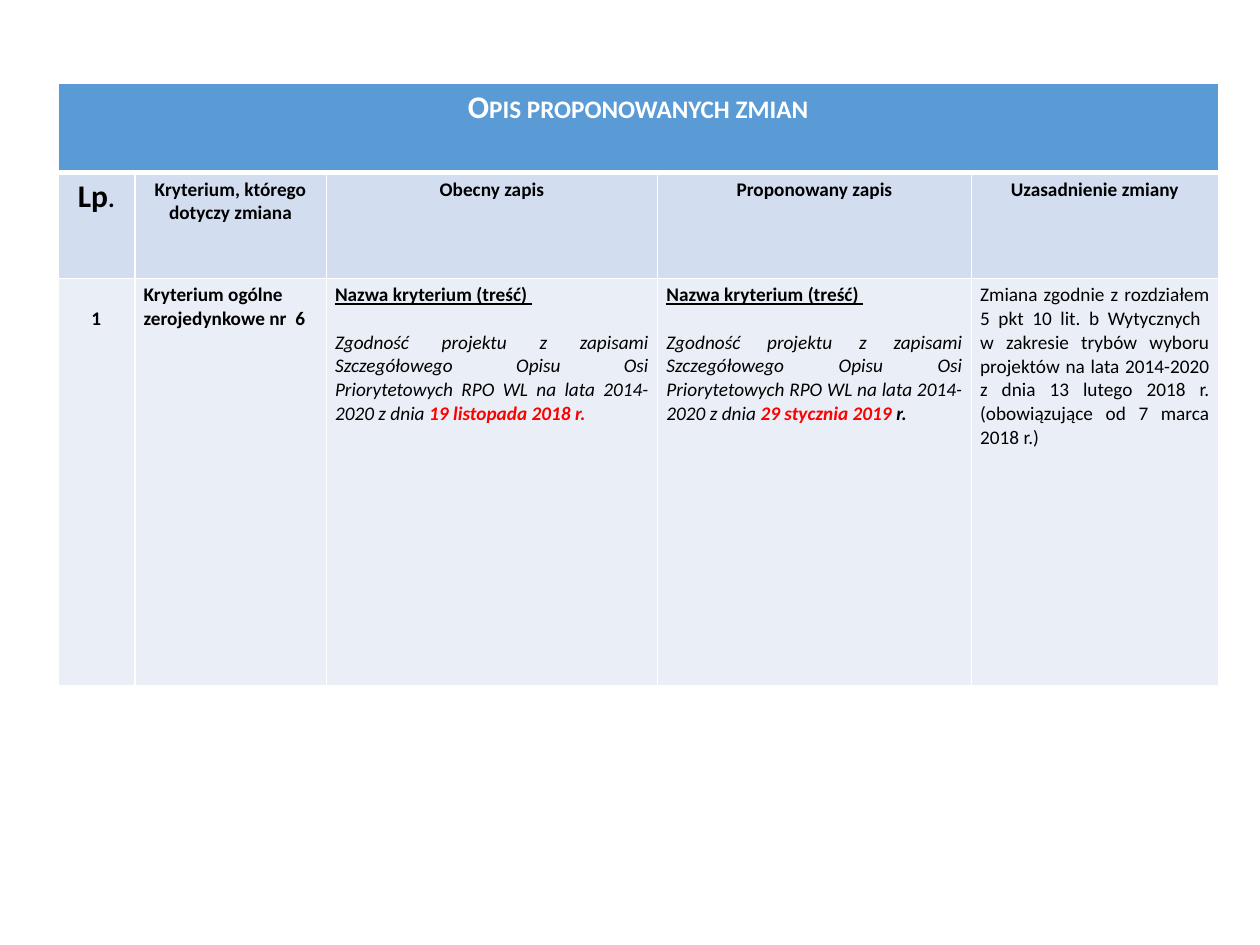
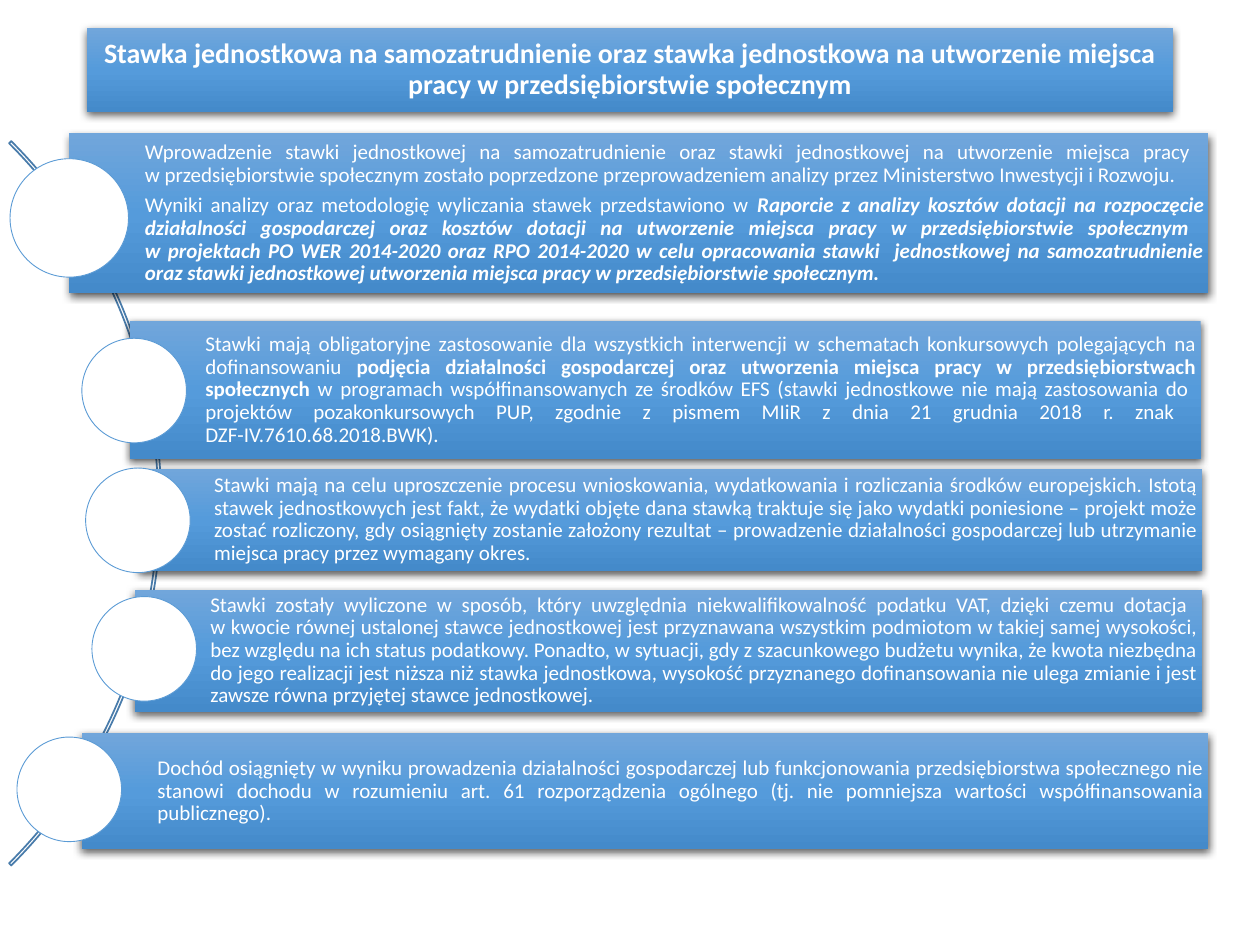
from copy import deepcopy

from pptx import Presentation
from pptx.dml.color import RGBColor
from pptx.enum.shapes import MSO_SHAPE
from pptx.enum.text import MSO_ANCHOR, PP_ALIGN
from pptx.oxml import parse_xml
from pptx.oxml.ns import nsdecls, qn
from pptx.util import Inches, Pt

WIDTH, HEIGHT = Inches(10), Inches(7.5)
COL, ROW = WIDTH / 100, HEIGHT / 75
FONT = "Calibri"

WHITE = RGBColor(0xFF, 0xFF, 0xFF)
BLACK = RGBColor(0, 0, 0)
RED = RGBColor(0xFF, 0, 0)
BLUE = RGBColor(0x5B, 0x9B, 0xD5)
ARC_BLUE = RGBColor(0x49, 0x7C, 0xAB)
HEADER_TINT = RGBColor(0xD2, 0xDE, 0xEF)
BODY_TINT = RGBColor(0xEA, 0xEF, 0xF7)
GRADIENT = [
    (0, RGBColor(0x71, 0xA6, 0xDB)),
    (0.5, RGBColor(0x55, 0x9B, 0xDB)),
    (1, RGBColor(0x44, 0x8A, 0xCA)),
]

TABLE_TITLE = "Opis proponowanych zmian"
HEADERS = [
    "Kryterium, którego dotyczy zmiana",
    "Obecny zapis",
    "Proponowany zapis",
    "Uzasadnienie zmiany",
]
CRITERION_NAME = ("Nazwa kryterium (treść) ", "bu")
CRITERION_TEXT = (
    "Zgodność projektu z zapisami Szczegółowego Opisu Osi Priorytetowych "
    "RPO WL na lata 2014-2020 z dnia ",
    "i",
)
REASON = (
    "Zmiana zgodnie z rozdziałem 5 pkt 10 lit. b Wytycznych \n"
    "w zakresie trybów wyboru projektów na lata 2014-2020 z dnia 13 lutego 2018 r. "
    "(obowiązujące od 7 marca 2018 r.)"
)
RATE_TITLE = (
    "Stawka jednostkowa na samozatrudnienie oraz stawka jednostkowa na utworzenie "
    "miejsca pracy w przedsiębiorstwie społecznym"
)
ANALYSIS = [
    [(
        "Wprowadzenie stawki jednostkowej na samozatrudnienie oraz stawki jednostkowej "
        "na utworzenie miejsca pracy \nw przedsiębiorstwie społecznym zostało poprzedzone "
        "przeprowadzeniem analizy przez Ministerstwo Inwestycji i Rozwoju.",
        "",
    )],
    [
        ("Wyniki analizy oraz metodologię wyliczania stawek przedstawiono w ", ""),
        (
            "Raporcie z analizy kosztów dotacji na rozpoczęcie działalności gospodarczej "
            "oraz kosztów dotacji na utworzenie miejsca pracy w przedsiębiorstwie "
            "społecznym \nw projektach PO WER 2014-2020 oraz RPO 2014-2020 w celu "
            "opracowania stawki  jednostkowej na samozatrudnienie oraz stawki "
            "jednostkowej utworzenia miejsca pracy w przedsiębiorstwie społecznym.",
            "bi",
        ),
    ],
]
OBLIGATION = [[
    (
        "Stawki mają obligatoryjne zastosowanie dla wszystkich interwencji w schematach "
        "konkursowych polegających na dofinansowaniu ",
        "",
    ),
    (
        "podjęcia działalności gospodarczej oraz utworzenia miejsca pracy "
        "w przedsiębiorstwach społecznych ",
        "b",
    ),
    (
        "w programach współfinansowanych ze środków EFS (stawki jednostkowe nie mają "
        "zastosowania do  projektów pozakonkursowych PUP, zgodnie z pismem MIiR z dnia "
        "21 grudnia 2018 r. znak \nDZF-IV.7610.68.2018.BWK).",
        "",
    ),
]]
SIMPLIFICATION = [[(
    "Stawki mają na celu uproszczenie procesu wnioskowania, wydatkowania i rozliczania "
    "środków europejskich. Istotą stawek jednostkowych jest fakt, że wydatki objęte dana "
    "stawką traktuje się jako wydatki poniesione – projekt może zostać rozliczony, gdy "
    "osiągnięty zostanie założony rezultat – prowadzenie działalności gospodarczej lub "
    "utrzymanie miejsca pracy przez wymagany okres.",
    "",
)]]
VAT = [[(
    "Stawki zostały wyliczone w sposób, który uwzględnia niekwalifikowalność podatku VAT, "
    "dzięki czemu dotacja \nw kwocie równej ustalonej stawce jednostkowej jest przyznawana "
    "wszystkim podmiotom w takiej samej wysokości, bez względu na ich status podatkowy. "
    "Ponadto, w sytuacji, gdy z szacunkowego budżetu wynika, że kwota niezbędna do jego "
    "realizacji jest niższa niż stawka jednostkowa, wysokość przyznanego dofinansowania "
    "nie ulega zmianie i jest zawsze równa przyjętej stawce jednostkowej.",
    "",
)]]
INCOME = [[(
    "Dochód osiągnięty w wyniku prowadzenia działalności gospodarczej lub funkcjonowania "
    "przedsiębiorstwa społecznego nie stanowi dochodu w rozumieniu art. 61 rozporządzenia "
    "ogólnego (tj. nie pomniejsza wartości współfinansowania publicznego).",
    "",
)]]
BARS = [
    ((5.5, 10.6, 90.4, 12.7), (5.5, 17.3, 9.4), ANALYSIS),
    ((10.3, 25.5, 85, 10.9), (10.65, 31, 8.3), OBLIGATION),
    ((11, 37.2, 84.4, 8.1), (10.95, 41.3, 8.3), SIMPLIFICATION),
    ((10.7, 46.8, 84.7, 9.7), (11.45, 51.5, 8.3), VAT),
    ((6.5, 58.2, 89.4, 9.2), (5.5, 62.65, 8.3), INCOME),
]


def grid_box(left, top, width, height):
    """Turn columns and rows of the slide grid into lengths."""
    return int(left * COL), int(top * ROW), int(width * COL), int(height * ROW)


def write_paragraph(p, runs, size, color, align):
    """Write runs with style letters: b, i, u, r for red, s for small capitals."""
    p.alignment = align
    p.font.name, p.font.size = FONT, Pt(size)
    for text, style in runs:
        for number, line in enumerate(text.split("\n")):
            if number:
                p.add_line_break()
            r = p.add_run()
            r.text = line
            r.font.name, r.font.size = FONT, Pt(size)
            r.font.bold, r.font.italic = "b" in style, "i" in style
            r.font.underline = "u" in style
            r.font.color.rgb = RED if "r" in style else color
            if "s" in style:
                r._r.get_or_add_rPr().set("cap", "small")


def write_paragraphs(tf, paragraphs, size, color, align):
    """Write a list of paragraphs into a text frame."""
    for number, runs in enumerate(paragraphs):
        p = tf.add_paragraph() if number else tf.paragraphs[0]
        write_paragraph(p, runs, size, color, align)


def style_cell(cell, fill, bottom=1):
    """Give a cell white borders, a fill and margins."""
    tcPr = cell._tc.get_or_add_tcPr()
    for side, width in zip("LRTB", (1, 1, 1, bottom)):
        tcPr.append(parse_xml(
            f'<a:ln{side} {nsdecls("a")} w="{Pt(width)}"><a:solidFill>'
            f'<a:srgbClr val="{WHITE}"/></a:solidFill></a:ln{side}>'))
    cell.fill.solid()
    cell.fill.fore_color.rgb = fill
    cell.margin_left = cell.margin_right = Inches(0.07)
    cell.margin_top = cell.margin_bottom = Inches(0.04)


def add_changes_table(s):
    """Add the table that compares current and proposed wording."""
    tbl = s.shapes.add_table(3, 5, *grid_box(4.6, 6.6, 92.1, 47.8)).table
    tbl.first_row = tbl.horz_banding = False
    for column, width in zip(tbl.columns, (6.1, 15.2, 26.3, 24.9, 19.6)):
        column.width = int(width * COL)
    rows = zip(tbl.rows, (7.1, 8.4, 32.3), (BLUE, HEADER_TINT, BODY_TINT), (3, 1, 1))
    for row, height, fill, bottom in rows:
        row.height = int(height * ROW)
        for cell in row.cells:
            style_cell(cell, fill, bottom)
    tbl.cell(0, 0).merge(tbl.cell(0, 4))

    center, left, justify = PP_ALIGN.CENTER, PP_ALIGN.LEFT, PP_ALIGN.JUSTIFY
    write_paragraphs(tbl.cell(0, 0).text_frame, [[(TABLE_TITLE, "bs")]], 18, WHITE, center)
    write_paragraphs(tbl.cell(1, 0).text_frame, [[("Lp", "b"), (".", "bs")]], 18, BLACK, center)
    for column, header in enumerate(HEADERS, 1):
        write_paragraphs(tbl.cell(1, column).text_frame, [[(header, "b")]], 11, BLACK, center)

    body = [
        ([[("1", "b")]], center),
        ([[("Kryterium ogólne zerojedynkowe nr  6", "b")]], left),
        ([[CRITERION_NAME], [CRITERION_TEXT, ("19 listopada 2018 r.", "bir")]], justify),
        ([[CRITERION_NAME],
          [CRITERION_TEXT, ("29 stycznia 2019", "bir"), (" r.", "bi")]], justify),
        ([[(REASON, "")]], justify),
    ]
    for column, (paragraphs, align) in enumerate(body):
        tf = tbl.cell(2, column).text_frame
        write_paragraphs(tf, paragraphs, 11, BLACK, align)
        for p in tf.paragraphs[1:]:
            p.space_before = Pt(13.4)
    tbl.cell(2, 0).margin_top = Inches(0.23)


def add_bar(s, box, paragraphs, size, align, insets):
    """Add a gradient bar with a shadow and text."""
    sp = s.shapes.add_shape(MSO_SHAPE.RECTANGLE, *grid_box(*box))
    sp.line.fill.background()
    sp.fill.gradient()
    sp.fill.gradient_angle = 270
    stops = sp._element.spPr.find(qn("a:gradFill")).find(qn("a:gsLst"))
    stops.insert(1, deepcopy(stops[0]))
    for stop, (position, color) in zip(sp.fill.gradient_stops, GRADIENT):
        stop.position = position
        stop.color.rgb = color
    sp._element.spPr.append(parse_xml(
        f'<a:effectLst {nsdecls("a")}><a:outerShdw blurRad="{Pt(4.5)}" dist="{Pt(1.5)}" '
        'dir="5400000" algn="ctr" rotWithShape="0"><a:srgbClr val="000000">'
        '<a:alpha val="63000"/></a:srgbClr></a:outerShdw></a:effectLst>'))
    tf = sp.text_frame
    tf.word_wrap = True
    tf.vertical_anchor = MSO_ANCHOR.MIDDLE
    tf.margin_left, tf.margin_top, tf.margin_right, tf.margin_bottom = map(Inches, insets)
    write_paragraphs(tf, paragraphs, size, WHITE, align)
    for p in tf.paragraphs:
        p.line_spacing = 0.9
    return tf


def add_point(s, box, circle, paragraphs):
    """Add a text bar and the circle at its left end."""
    tf = add_bar(s, box, paragraphs, 12, PP_ALIGN.JUSTIFY, (0.6, 0.03, 0.03, 0.03))
    for p in tf.paragraphs:
        p.space_after = Pt(4.2)
    x, y, size = circle
    sp = s.shapes.add_shape(
        MSO_SHAPE.OVAL, *grid_box(x - size / 2, y - size / 2, size, size))
    sp.shadow.inherit = False
    sp.fill.solid()
    sp.fill.fore_color.rgb = WHITE
    sp.line.color.rgb = BLUE
    sp.line.width = Pt(0.5)


def add_arc(s):
    """Add the thin arc that links the circles."""
    sp = s.shapes.add_shape(MSO_SHAPE.BLOCK_ARC, *grid_box(-68.5, -0.7, 81.3, 81.3))
    for index, value in enumerate((189, 27, 0.003)):
        sp.adjustments[index] = value
    sp.shadow.inherit = False
    sp.fill.background()
    sp.line.color.rgb = ARC_BLUE
    sp.line.width = Pt(1)


def main():
    """Build both slides and save them."""
    prs = Presentation()
    prs.slide_width, prs.slide_height = WIDTH, HEIGHT
    blank = prs.slide_layouts[6]
    add_changes_table(prs.slides.add_slide(blank))
    s = prs.slides.add_slide(blank)
    add_bar(s, (6.9, 2.2, 86.2, 6.7), [[(RATE_TITLE, "b")]], 16, PP_ALIGN.CENTER,
            (0.1, 0.05, 0.1, 0.05))
    add_arc(s)
    for box, circle, paragraphs in BARS:
        add_point(s, box, circle, paragraphs)
    prs.save("out.pptx")


if __name__ == "__main__":
    main()
